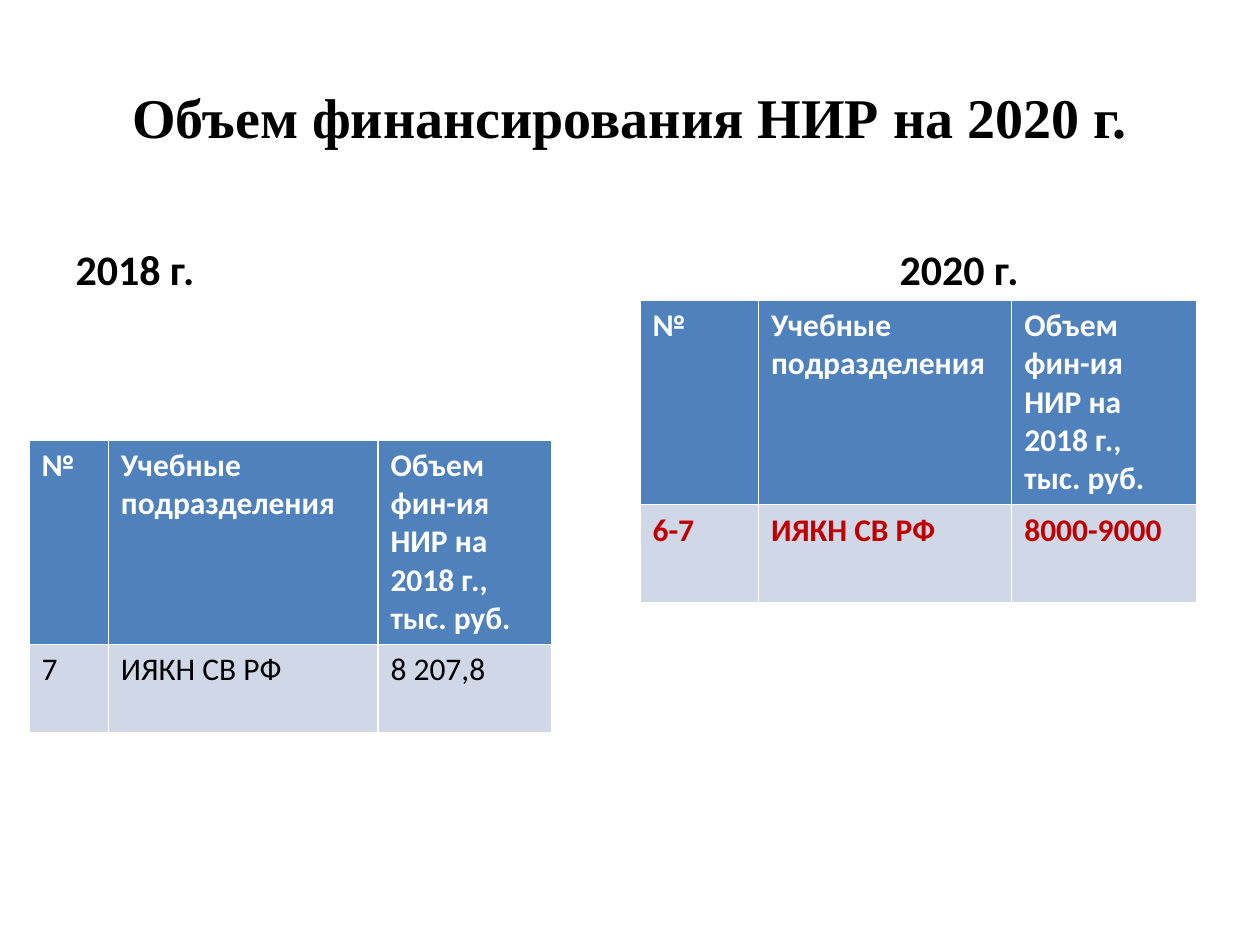
from dataclasses import dataclass

from pptx import Presentation
from pptx.dml.color import RGBColor
from pptx.enum import text
from pptx.util import Inches, Pt

BLACK = RGBColor(0x00, 0x00, 0x00)
WHITE = RGBColor(0xFF, 0xFF, 0xFF)
RED = RGBColor(0xC0, 0x00, 0x00)
HEADER_BLUE = RGBColor(0x4F, 0x81, 0xBD)
ROW_BLUE = RGBColor(0xD0, 0xD8, 0xE8)

HEADINGS = ("№", "Учебные подразделения", "Объем фин-ия НИР на 2018 г., тыс. руб.")
HEADER_HEIGHT = 1.6
COMPARISON_LAYOUT = 4


@dataclass
class YearLabel:
    placeholder: int
    wording: str
    left: float
    indent: float


@dataclass
class FundingTable:
    left: float
    top: float
    column_widths: tuple[float, ...]
    row_height: float
    values: tuple[str, ...]
    color: RGBColor
    bold: bool


LABELS = (
    YearLabel(1, "2018 г.", 0.5, 0),
    YearLabel(3, "2020 г.", 5.08, 1.96),
)
TABLES = (
    FundingTable(5.08, 2.38, (0.94, 2.01, 1.47), 0.78,
                 ("6-7", "ИЯКН СВ РФ", "8000-9000"), RED, True),
    FundingTable(0.23, 3.49, (0.63, 2.14, 1.38), 0.7,
                 ("7", "ИЯКН СВ РФ", "8 207,8"), BLACK, False),
)


def place(shape, left: float, top: float, width: float, height: float) -> None:
    shape.left, shape.top = Inches(left), Inches(top)
    shape.width, shape.height = Inches(width), Inches(height)


def style_font(paragraph, size: float, color: RGBColor, bold: bool,
               name: str = "Calibri") -> None:
    font = paragraph.font
    font.name, font.size, font.bold = name, Pt(size), bold
    font.color.rgb = color


def add_title(slide, wording: str) -> None:
    title = slide.shapes.title
    place(title, 0.5, 0.3, 9, 1.25)
    title.text_frame.text = wording
    title.text_frame.vertical_anchor = text.MSO_ANCHOR.MIDDLE
    paragraph = title.text_frame.paragraphs[0]
    paragraph.alignment = text.PP_ALIGN.CENTER
    style_font(paragraph, 32, BLACK, True, "Times New Roman")


def add_label(slide, label: YearLabel) -> None:
    shape = slide.placeholders[label.placeholder]
    place(shape, label.left, 1.68, 4.42, 0.7)
    shape.text_frame.text = label.wording
    shape.text_frame.vertical_anchor = text.MSO_ANCHOR.BOTTOM
    paragraph = shape.text_frame.paragraphs[0]
    style_font(paragraph, 24, BLACK, True)
    if label.indent:
        paragraph._p.get_or_add_pPr().set("marL", str(Inches(label.indent)))


def fill_row(table, row: int, values: tuple[str, ...], fill: RGBColor,
             color: RGBColor, bold: bool) -> None:
    for column, value in enumerate(values):
        cell = table.cell(row, column)
        cell.text = value
        cell.fill.solid()
        cell.fill.fore_color.rgb = fill
        style_font(cell.text_frame.paragraphs[0], 18, color, bold)


def add_funding_table(slide, funding: FundingTable) -> None:
    # White cell borders come from the default table style
    table = slide.shapes.add_table(
        2, len(HEADINGS), Inches(funding.left), Inches(funding.top),
        Inches(sum(funding.column_widths)),
        Inches(HEADER_HEIGHT + funding.row_height)).table
    for column, width in zip(table.columns, funding.column_widths):
        column.width = Inches(width)
    for row, height in zip(table.rows, (HEADER_HEIGHT, funding.row_height)):
        row.height = Inches(height)
    fill_row(table, 0, HEADINGS, HEADER_BLUE, WHITE, True)
    fill_row(table, 1, funding.values, ROW_BLUE, funding.color, funding.bold)


def main() -> None:
    presentation = Presentation()
    presentation.slide_width, presentation.slide_height = Inches(10), Inches(7.5)
    slide = presentation.slides.add_slide(
        presentation.slide_layouts[COMPARISON_LAYOUT])

    # Title and year labels
    add_title(slide, "Объем финансирования НИР на 2020 г.")
    for label in LABELS:
        add_label(slide, label)

    # Tables take the place of the two content placeholders
    for index in (2, 4):
        element = slide.placeholders[index].element
        element.getparent().remove(element)
    for funding in TABLES:
        add_funding_table(slide, funding)

    presentation.save("out.pptx")


if __name__ == "__main__":
    main()
